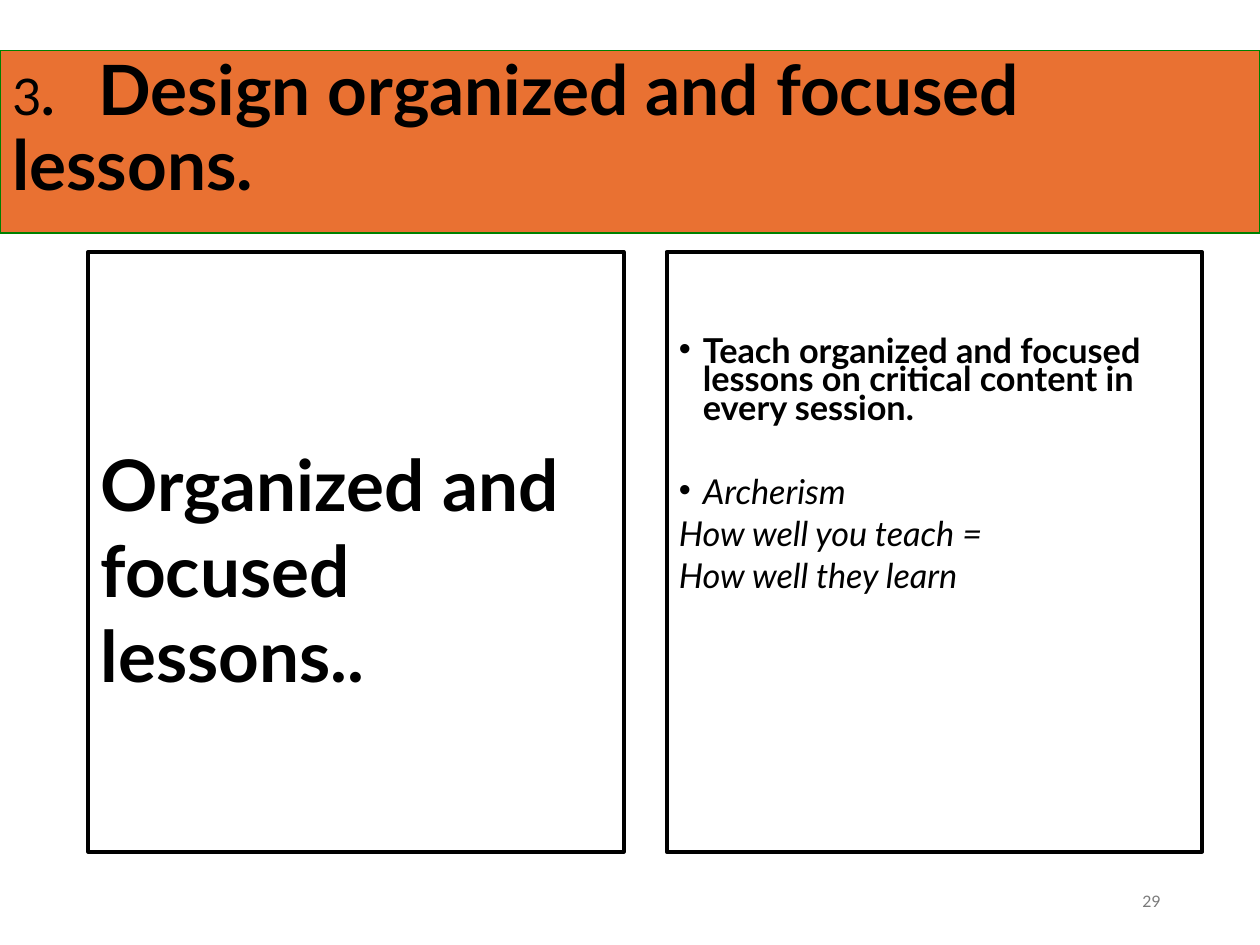
from lxml.etree import SubElement
from pptx import Presentation
from pptx.dml.color import RGBColor
from pptx.enum.shapes import MSO_SHAPE as Shape
from pptx.enum.text import MSO_ANCHOR as Anchor, PP_ALIGN as Align
from pptx.oxml.ns import qn
from pptx.util import Inches, Pt

ORANGE = RGBColor(0xE9, 0x71, 0x32)
GREEN = RGBColor(0x00, 0x80, 0x00)
BLACK = RGBColor(0x00, 0x00, 0x00)
GRAY = RGBColor(0x79, 0x79, 0x79)
FONT = "Lato"


def set_values(target, values):
    """Set each attribute of the target from a dict."""
    for name, value in values.items():
        setattr(target, name, value)


def add_box(slide, box, line_color, line_width, top_margin, fill=None):
    """Add an outlined rectangle and return its text frame."""
    shape = slide.shapes.add_shape(Shape.RECTANGLE, *map(Inches, box))
    shape.shadow.inherit = False
    if fill is None:
        shape.fill.background()
    else:
        shape.fill.solid()
        shape.fill.fore_color.rgb = fill
    shape.line.color.rgb = line_color
    shape.line.width = Pt(line_width)
    set_values(shape.text_frame, {"word_wrap": True, "vertical_anchor": Anchor.TOP,
                                  "margin_top": Inches(top_margin)})
    return shape.text_frame


def add_run(paragraph, text, size, color=BLACK, **style):
    """Add a run of formatted text to the paragraph."""
    run = paragraph.add_run()
    run.text = text
    set_values(run.font, {"name": FONT, "size": Pt(size), **style})
    run.font.color.rgb = color


def add_bullet(paragraph, indent):
    """Give the paragraph a hanging round bullet."""
    properties = paragraph._p.get_or_add_pPr()
    properties.set("marL", str(Inches(indent)))
    properties.set("indent", str(-Inches(indent)))
    SubElement(properties, qn("a:buFont"), typeface="Arial")
    SubElement(properties, qn("a:buChar"), char="•")


def add_tab_stop(paragraph, position):
    """Give the paragraph one left tab stop."""
    tabs = SubElement(paragraph._p.get_or_add_pPr(), qn("a:tabLst"))
    SubElement(tabs, qn("a:tab"), pos=str(Inches(position)), algn="l")


def add_title(slide, box):
    """Place the numbered title banner."""
    paragraph = add_box(slide, box, GREEN, 0.75, 0.04, ORANGE).paragraphs[0]
    set_values(paragraph, {"alignment": Align.LEFT, "line_spacing": 0.9})
    add_tab_stop(paragraph, 0.68)
    add_run(paragraph, "3", 28.8, bold=False)
    add_run(paragraph, ".\t", 32.4, bold=True)
    add_run(paragraph, "Design organized and focused lessons.", 39.6, bold=True)


def add_topic(slide, box):
    """Place the panel with the large topic."""
    paragraph = add_box(slide, box, BLACK, 2.25, 1.5).paragraphs[0]
    paragraph.alignment = Align.LEFT
    add_run(paragraph, "Organized and focused lessons..", 40.6, bold=True)


def add_points(slide, box):
    """Place the panel with the teaching points."""
    frame = add_box(slide, box, BLACK, 2.25, 0.7)
    points = [
        ("Teach organized and focused lessons on critical content in every session.",
         0, True, {"bold": True}),
        ("Archerism", 31.5, True, {"italic": True}),
        ("How well you teach =", 7.5, False, {"italic": True}),
        ("How well they learn", 7.5, False, {"italic": True}),
    ]
    for index, (text, space, bulleted, style) in enumerate(points):
        paragraph = frame.add_paragraph() if index else frame.paragraphs[0]
        set_values(paragraph, {"alignment": Align.LEFT, "line_spacing": 0.7,
                               "space_before": Pt(space)})
        if bulleted:
            add_bullet(paragraph, 0.19)
        add_run(paragraph, text, 19.6, **style)


def add_page_number(slide, box):
    """Place the page number."""
    frame = slide.shapes.add_textbox(*map(Inches, box)).text_frame
    set_values(frame, {"word_wrap": True, "vertical_anchor": Anchor.MIDDLE})
    frame.paragraphs[0].alignment = Align.RIGHT
    add_run(frame.paragraphs[0], "29", 9, GRAY)


def main():
    """Build and save the slide."""
    presentation = Presentation()
    set_values(presentation, {"slide_width": Inches(10), "slide_height": Inches(7.5)})
    slide = presentation.slides.add_slide(presentation.slide_layouts[6])
    add_title(slide, (0, 0.4, 10, 1.45))
    add_topic(slide, (0.7, 2, 4.25, 4.76))
    add_points(slide, (5.29, 2, 4.25, 4.76))
    add_page_number(slide, (7.06, 6.95, 2.25, 0.4))
    presentation.save("out.pptx")


if __name__ == "__main__":
    main()
